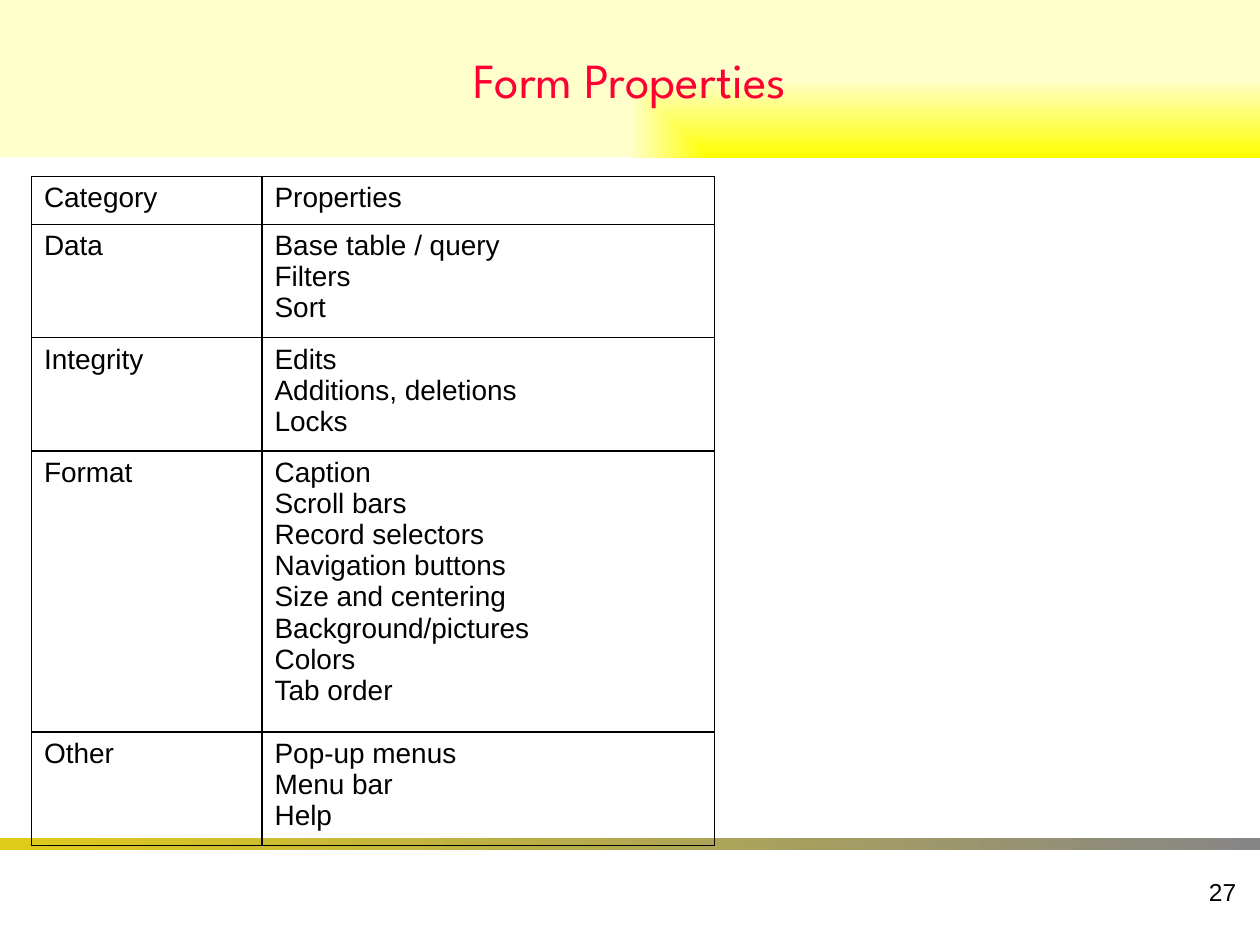
from dataclasses import dataclass

import pptx
import pptx.dml.color
import pptx.enum.shapes
import pptx.enum.text
import pptx.oxml
import pptx.oxml.ns
import pptx.util
from pptx.util import Inches


@dataclass(frozen=True)
class Theme:
    title_font: str = "League Spartan"
    body_font: str = "Arial"
    title_size: int = 28
    table_size: int = 16
    number_size: int = 14
    title_color: str = "FF0033"
    text_color: str = "000000"
    title_gradient: tuple = ("FFFF00", "FFFFCC")
    bar_gradient: tuple = ("E0CB1B", "868686")


THEME = Theme()
NAMESPACE = pptx.oxml.ns.nsdecls("a")
COLUMN_WIDTHS = (1.83, 3.59)
ROW_HEIGHTS = (0.38, 0.9, 0.9, 2.23, 0.9)
FORM_PROPERTIES = (
    ("Category", ("Properties",)),
    ("Data", ("Base table / query", "Filters", "Sort")),
    ("Integrity", ("Edits", "Additions, deletions", "Locks")),
    ("Format", ("Caption", "Scroll bars", "Record selectors", "Navigation buttons",
                "Size and centering", "Background/pictures", "Colors", "Tab order")),
    ("Other", ("Pop-up menus", "Menu bar", "Help")),
)


def rgb(color):
    return pptx.dml.color.RGBColor.from_string(color)


def format_text(text_frame, font, size, color, alignment=None):
    for paragraph in text_frame.paragraphs:
        paragraph.alignment = alignment
        for run in paragraph.runs:
            run.font.name = font
            run.font.size = pptx.util.Pt(size)
            run.font.color.rgb = rgb(color)


def fill_gradient(shape, colors):
    shape.fill.gradient()
    shape.fill.gradient_angle = 0
    for stop, color in zip(shape.fill.gradient_stops, colors):
        stop.color.rgb = rgb(color)


def radiate_from_bottom_right(shape):
    linear = shape._element.spPr.find(".//" + pptx.oxml.ns.qn("a:lin"))
    corner = pptx.oxml.parse_xml(
        f'<a:path {NAMESPACE} path="rect"><a:fillToRect l="100000" t="100000"/></a:path>')
    linear.getparent().replace(linear, corner)


def add_title(slide, text):
    title = slide.shapes.title
    title.left, title.top = Inches(0), Inches(0)
    title.width, title.height = Inches(10), Inches(1.25)
    fill_gradient(title, THEME.title_gradient)
    radiate_from_bottom_right(title)
    title.text_frame.text = text
    title.text_frame.auto_size = pptx.enum.text.MSO_AUTO_SIZE.NONE
    title.text_frame.vertical_anchor = pptx.enum.text.MSO_ANCHOR.MIDDLE
    format_text(title.text_frame, THEME.title_font, THEME.title_size,
                THEME.title_color, pptx.enum.text.PP_ALIGN.CENTER)


def add_footer_bar(slide):
    bar = slide.shapes.add_shape(pptx.enum.shapes.MSO_SHAPE.RECTANGLE,
                                 Inches(0), Inches(6.65), Inches(10), Inches(0.1))
    bar.shadow.inherit = False
    bar.line.fill.background()
    fill_gradient(bar, THEME.bar_gradient)


def add_borders(cell):
    properties = cell._tc.get_or_add_tcPr()
    for position, side in enumerate(("lnL", "lnR", "lnT", "lnB")):
        properties.insert(position, pptx.oxml.parse_xml(
            f'<a:{side} {NAMESPACE} w="12700"><a:solidFill>'
            f'<a:srgbClr val="{THEME.text_color}"/></a:solidFill></a:{side}>'))


def fill_cell(cell, lines):
    cell.fill.background()
    add_borders(cell)
    cell.text_frame.text = "\n".join(lines)
    format_text(cell.text_frame, THEME.body_font, THEME.table_size, THEME.text_color)
    for paragraph in cell.text_frame.paragraphs:
        paragraph_properties = paragraph._p.get_or_add_pPr()
        paragraph_properties.set("marL", str(Inches(0.38)))
        paragraph_properties.set("indent", str(-Inches(0.38)))


def add_property_table(slide):
    frame = slide.shapes.add_table(len(ROW_HEIGHTS), len(COLUMN_WIDTHS),
                                   Inches(0.25), Inches(1.4),
                                   Inches(sum(COLUMN_WIDTHS)), Inches(sum(ROW_HEIGHTS)))
    table = frame.table
    table.first_row = table.horz_banding = False
    for column, width in zip(table.columns, COLUMN_WIDTHS):
        column.width = Inches(width)
    for row, height, (category, names) in zip(table.rows, ROW_HEIGHTS, FORM_PROPERTIES):
        row.height = Inches(height)
        fill_cell(row.cells[0], (category,))
        fill_cell(row.cells[1], names)


def add_slide_number(slide, number):
    box = slide.shapes.add_textbox(Inches(7.83), Inches(6.83), Inches(2.08), Inches(0.5))
    box.text_frame.word_wrap = True
    box.text_frame.vertical_anchor = pptx.enum.text.MSO_ANCHOR.MIDDLE
    box.text_frame.text = number
    format_text(box.text_frame, THEME.body_font, THEME.number_size,
                THEME.text_color, pptx.enum.text.PP_ALIGN.RIGHT)


def main():
    presentation = pptx.Presentation()
    presentation.slide_width = Inches(10)
    presentation.slide_height = Inches(7.5)
    slide = presentation.slides.add_slide(presentation.slide_layouts[5])
    add_footer_bar(slide)
    add_title(slide, "Form Properties")
    add_property_table(slide)
    add_slide_number(slide, "27")
    presentation.save("out.pptx")


if __name__ == "__main__":
    main()
